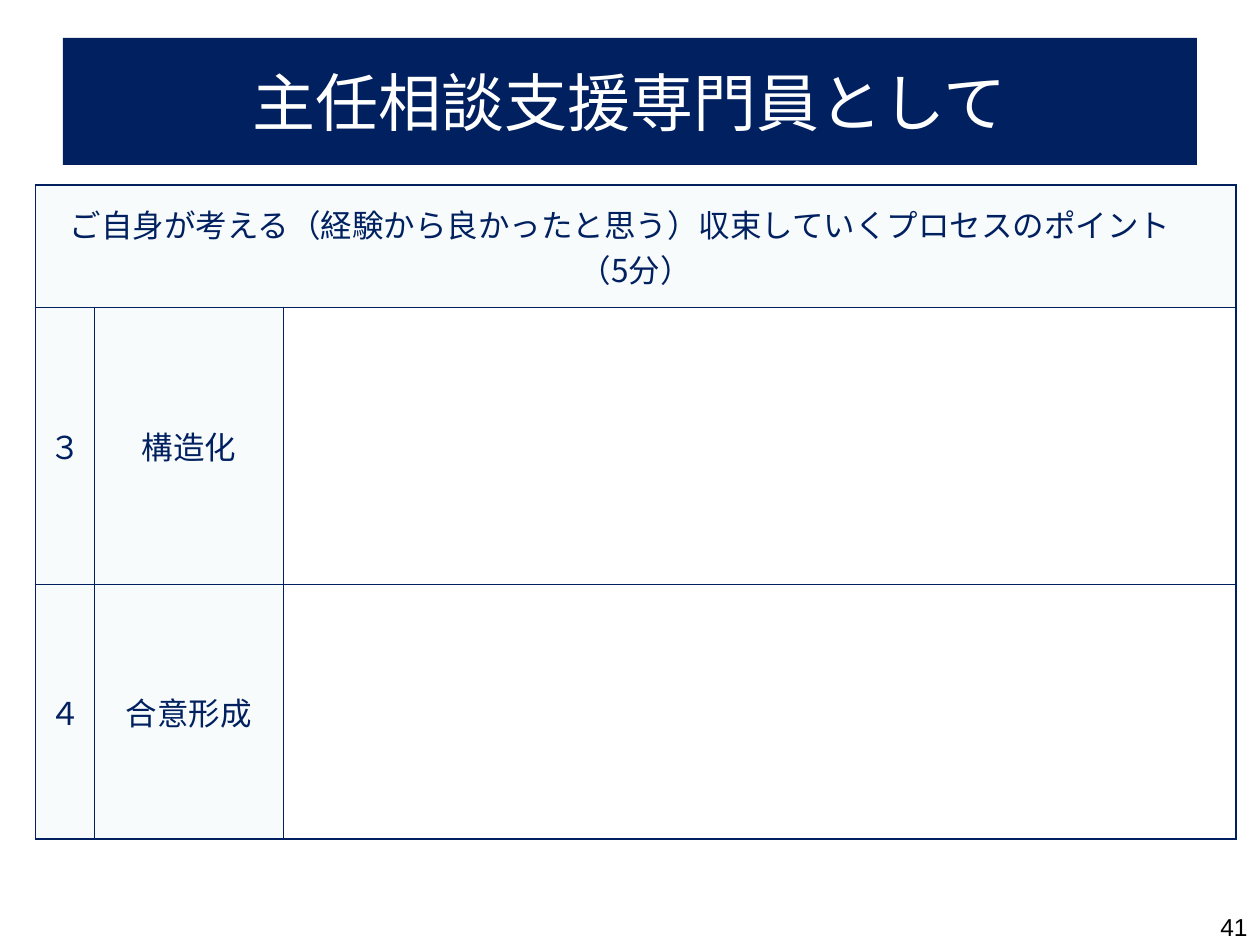
from lxml import etree
from pptx import Presentation
from pptx.dml.color import RGBColor
from pptx.enum.shapes import MSO_SHAPE
from pptx.enum.text import MSO_ANCHOR, PP_ALIGN
from pptx.oxml.ns import qn
from pptx.util import Inches, Pt

NAVY, PALE, WHITE, BLACK = "002060", "F8FBFC", "FFFFFF", "000000"
JP_FONT = "Noto Sans CJK JP"


def color(value):
    return RGBColor.from_string(value)


def write(tf, text, size=18, fill=NAVY, font=JP_FONT, align=PP_ALIGN.CENTER):
    p = tf.paragraphs[0]
    p.alignment = align
    r = p.add_run()
    r.text = text
    r.font.size = Pt(size)
    r.font.name = font
    r.font.color.rgb = color(fill)
    # East Asian typeface
    etree.SubElement(r.font._element, qn("a:ea"), typeface=font)


def set_borders(cell, line=NAVY, width=1):
    tcPr = cell._tc.get_or_add_tcPr()
    for i, side in enumerate(("lnL", "lnR", "lnT", "lnB")):
        ln = etree.Element(qn(f"a:{side}"), w=str(Pt(width)))
        fill = etree.SubElement(ln, qn("a:solidFill"))
        etree.SubElement(fill, qn("a:srgbClr"), val=line)
        tcPr.insert(i, ln)


def add_title(slide, box, text):
    sp = slide.shapes.add_shape(MSO_SHAPE.RECTANGLE, *map(Inches, box))
    sp.shadow.inherit = False
    sp.fill.solid()
    sp.fill.fore_color.rgb = color(NAVY)
    sp.line.fill.background()
    tf = sp.text_frame
    tf.word_wrap = True
    tf.vertical_anchor = MSO_ANCHOR.MIDDLE
    write(tf, text, size=36, fill=WHITE)


def add_worksheet(slide, box, rows, col_widths, row_heights):
    table = slide.shapes.add_table(
        len(rows), len(col_widths), *map(Inches, box)).table
    table.first_row = table.horz_banding = False
    for col, width in zip(table.columns, col_widths):
        col.width = Inches(width)
    for row, height in zip(table.rows, row_heights):
        row.height = Inches(height)

    # Heading spans the full width
    table.cell(0, 0).merge(table.cell(0, len(col_widths) - 1))
    for r, texts in enumerate(rows):
        for c, text in enumerate(texts):
            cell = table.cell(r, c)
            cell.vertical_anchor = MSO_ANCHOR.MIDDLE
            if text or cell.is_spanned:
                cell.fill.solid()
                cell.fill.fore_color.rgb = color(PALE)
            else:
                cell.fill.background()
            if text:
                write(cell.text_frame, text)
            set_borders(cell)


def add_page_number(slide, box, number):
    tf = slide.shapes.add_textbox(*map(Inches, box)).text_frame
    tf.word_wrap = True
    write(tf, number, size=14, fill=BLACK, font="Arial", align=PP_ALIGN.RIGHT)


def main():
    prs = Presentation()
    prs.slide_width, prs.slide_height = Inches(10), Inches(7.5)
    slide = prs.slides.add_slide(prs.slide_layouts[6])

    add_title(slide, (0.5, 0.3, 9, 1.01), "主任相談支援専門員として")
    heading = "ご自身が考える（経験から良かったと思う）収束していくプロセスのポイント　（5分）"
    rows = [
        (heading, "", ""),
        ("３", "構造化", ""),
        ("４", "合意形成", ""),
    ]
    add_worksheet(slide, (0.28, 1.47, 9.53, 5.2), rows,
                  col_widths=(0.47, 1.5, 7.56), row_heights=(0.97, 2.2, 2.02))
    add_page_number(slide, (7.67, 7.19, 2.33, 0.29), "41")

    prs.save("out.pptx")


if __name__ == "__main__":
    main()
